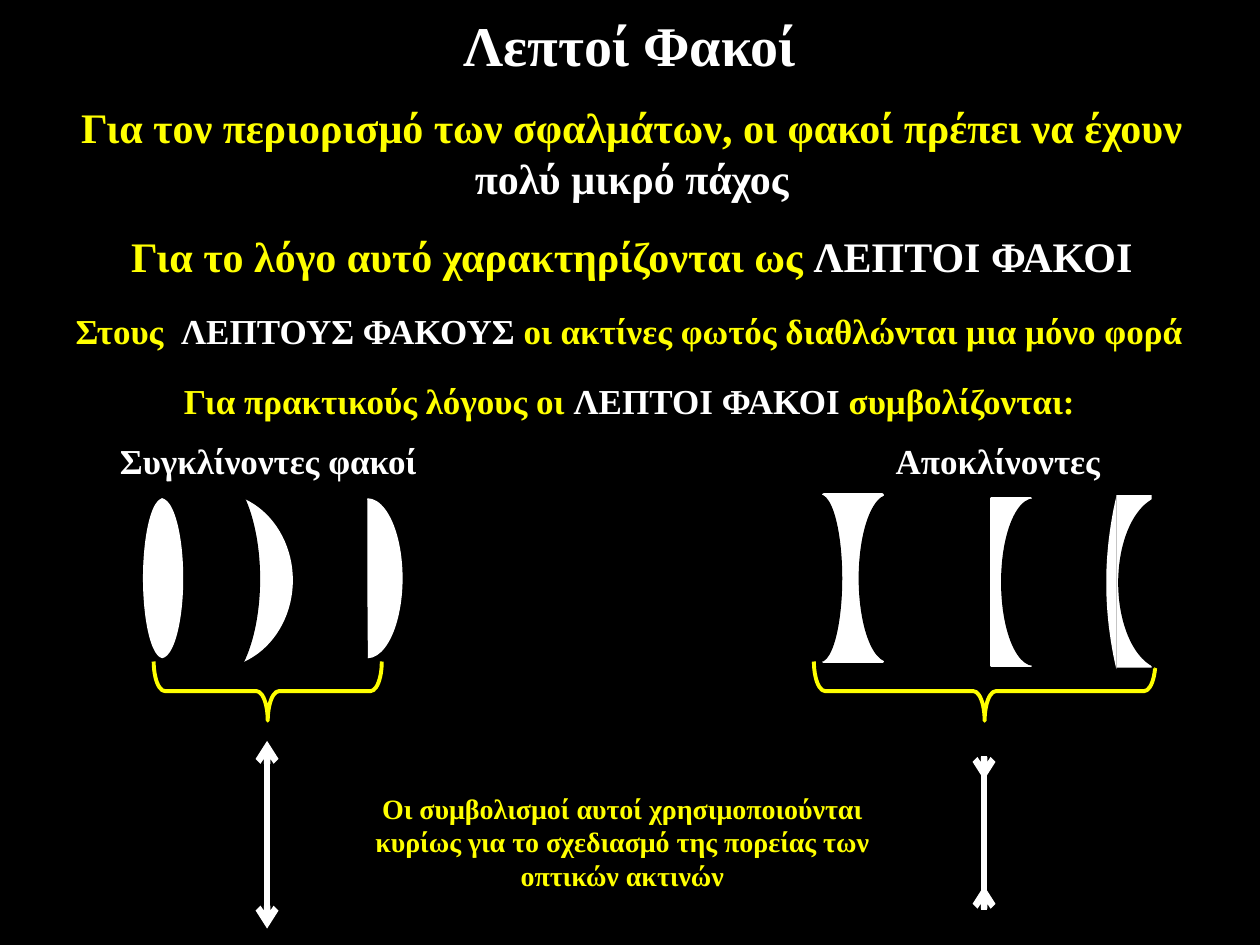
from lxml.etree import SubElement
from pptx import Presentation
from pptx.dml.color import RGBColor
from pptx.enum.shapes import MSO_CONNECTOR, MSO_SHAPE
from pptx.enum.text import MSO_ANCHOR, PP_ALIGN
from pptx.oxml.ns import qn
from pptx.util import Inches, Pt

COLORS = {"black": "000000", "white": "FFFFFF", "yellow": "FFFF00"}
FONT = "Times New Roman"
CELL = Inches(1)  # the slide is a grid of 10 columns by 7.5 rows
COLUMNS, ROWS = 10, 7.5
BODY_LEFT, BODY_WIDTH = 0.3, 9.43
HALF_TURN = 53.74  # end angle that makes an arc a right half ellipse


def cells(*counts):
    return [round(count * CELL) for count in counts]


def color(name):
    return RGBColor.from_string(COLORS[name])


def write(box, size, *spans):
    """Fill a text frame with centred bold (text, colour) spans."""
    frame = box.text_frame
    frame.word_wrap = True
    para = frame.paragraphs[0]
    para.alignment = PP_ALIGN.CENTER
    for text, name in spans:
        span = para.add_run()
        span.text = text
        span.font.name = FONT
        span.font.size = Pt(size)
        span.font.bold = True
        span.font.color.rgb = color(name)


def add_title(page, text):
    title = page.shapes.title
    title.left, title.top, title.width, title.height = cells(0, 0.02, COLUMNS, 0.66)
    title.text_frame.vertical_anchor = MSO_ANCHOR.MIDDLE
    write(title, 32, (text, "white"))


def add_text(parent, place, size, *spans):
    write(parent.shapes.add_textbox(*cells(*place)), size, *spans)


def paint(shape, fill=None, line=None, width=0.75):
    shape.shadow.inherit = False
    if fill:
        shape.fill.solid()
        shape.fill.fore_color.rgb = color(fill)
    else:
        shape.fill.background()
    if line:
        shape.line.color.rgb = color(line)
        shape.line.width = Pt(width)
    else:
        shape.line.fill.background()


def add_half_ellipse(group, place, name, flip=False):
    arc = group.shapes.add_shape(MSO_SHAPE.ARC, *cells(*place))
    arc.adjustments[1] = HALF_TURN
    paint(arc, name, name)
    if flip:
        arc._element.spPr.find(qn("a:xfrm")).set("flipH", "1")


def add_slab(group, place, line=None):
    slab = group.shapes.add_shape(MSO_SHAPE.RECTANGLE, *cells(*place))
    paint(slab, "white", line, 2)


def add_bulge(group, right, top, depth, height, name):
    """Draw a shape with a straight right side and a left side bulging by depth."""
    steps = 24
    points = []
    for step in range(steps + 1):
        share = step / steps
        bow = 1 - (2 * share - 1) ** 2
        points.append(cells(right - depth * bow, top + height * share))
    builder = group.shapes.build_freeform(*points[0], scale=1.0)
    builder.add_line_segments(points[1:], close=True)
    paint(builder.convert_to_shape(), name)


def add_brace(group, place):
    brace = group.shapes.add_shape(MSO_SHAPE.LEFT_BRACE, *cells(*place))
    brace.rotation = 270
    brace.adjustments[0] = 0.19
    paint(brace, line="yellow", width=2.25)


def add_ray(group, column, start, end, *heads):
    """Draw a vertical line with open arrowheads at the named ends."""
    ray = group.shapes.add_connector(
        MSO_CONNECTOR.STRAIGHT, *cells(column, start, column, end))
    ray.line.color.rgb = color("white")
    ray.line.width = Pt(3.75)
    for head in heads:
        SubElement(ray.line._get_or_add_ln(), qn(f"a:{head}"), type="arrow")
    SubElement(ray._element.spPr, qn("a:effectLst"))


def add_converging(page):
    group = page.shapes.add_group_shape()
    top, height = 3.96, 1.26
    add_half_ellipse(group, (1.11, top, 0.34, height), "white")
    add_half_ellipse(group, (1.14, top, 0.31, height), "white", flip=True)
    add_half_ellipse(group, (1.08, 3.91, 1.24, 1.39), "white")
    add_half_ellipse(group, (1.29, 3.71, 0.77, 1.77), "black")
    add_half_ellipse(group, (2.64, top, 0.55, height), "white")
    add_text(group, (0.75, 3.44, 2.76, 0.44), 20, ("Συγκλίνοντες φακοί", "white"))
    add_brace(group, (1.89, 4.58, 0.47, 1.81))
    add_ray(group, 2.12, 5.88, 7.37, "headEnd", "tailEnd")


def add_diverging(page):
    group = page.shapes.add_group_shape()
    height = 1.32
    add_text(group, (6.9, 3.44, 2.04, 0.44), 20, ("Αποκλίνοντες", "white"))
    add_slab(group, (6.54, 3.93, 0.46, height), "white")
    add_half_ellipse(group, (6.34, 3.93, 0.34, height), "black")
    add_half_ellipse(group, (6.82, 3.93, 0.47, height), "black", flip=True)
    add_slab(group, (7.87, 3.96, 0.31, height), "white")
    add_half_ellipse(group, (7.95, 3.96, 0.51, height), "black", flip=True)
    add_brace(group, (7.58, 4.13, 0.47, 2.71))
    add_ray(group, 7.81, 6.07, 7.17)
    add_ray(group, 7.81, 7.03, 7.22, "headEnd")
    add_ray(group, 7.81, 6.19, 6, "headEnd")
    top, height = 3.94, 1.37
    add_slab(group, (8.86, 3.93, 0.28, height))
    add_bulge(group, 9.16, top, 0.28, height, "black")
    add_bulge(group, 8.86, top, 0.08, height, "white")
    add_half_ellipse(group, (8.8, top, 0.82, height), "black")
    add_half_ellipse(group, (8.88, top, 0.74, height), "black", flip=True)


def main():
    deck = Presentation()
    deck.slide_width, deck.slide_height = cells(COLUMNS, ROWS)
    page = deck.slides.add_slide(deck.slide_layouts[5])
    page.background.fill.solid()
    page.background.fill.fore_color.rgb = color("black")

    add_title(page, "Λεπτοί Φακοί")
    add_text(page, (BODY_LEFT, 0.76, BODY_WIDTH, 0.9), 24,
             ("Για τον περιορισμό των σφαλμάτων, οι φακοί πρέπει να έχουν ", "yellow"),
             ("πολύ μικρό πάχος", "white"))
    add_text(page, (BODY_LEFT, 1.78, BODY_WIDTH, 0.55), 24,
             ("Για το λόγο αυτό χαρακτηρίζονται ως ", "yellow"),
             ("ΛΕΠΤΟΙ ΦΑΚΟΙ", "white"))
    add_text(page, (0.28, 2.41, BODY_WIDTH, 0.55), 20,
             ("Στους  ", "yellow"),
             ("ΛΕΠΤΟΥΣ ΦΑΚΟΥΣ", "white"),
             (" οι ακτίνες φωτός διαθλώνται μια μόνο φορά", "yellow"))
    add_text(page, (0.28, 2.96, BODY_WIDTH, 0.55), 20,
             ("Για πρακτικούς λόγους οι ", "yellow"),
             ("ΛΕΠΤΟΙ ΦΑΚΟΙ", "white"),
             (" συμβολίζονται:", "yellow"))
    add_converging(page)
    add_text(page, (2.76, 6.23, 4.36, 0.91), 16,
             ("Οι συμβολισμοί αυτοί χρησιμοποιούνται κυρίως για το σχεδιασμό "
              "της πορείας των οπτικών ακτινών", "yellow"))
    add_diverging(page)
    deck.save("out.pptx")


if __name__ == "__main__":
    main()
